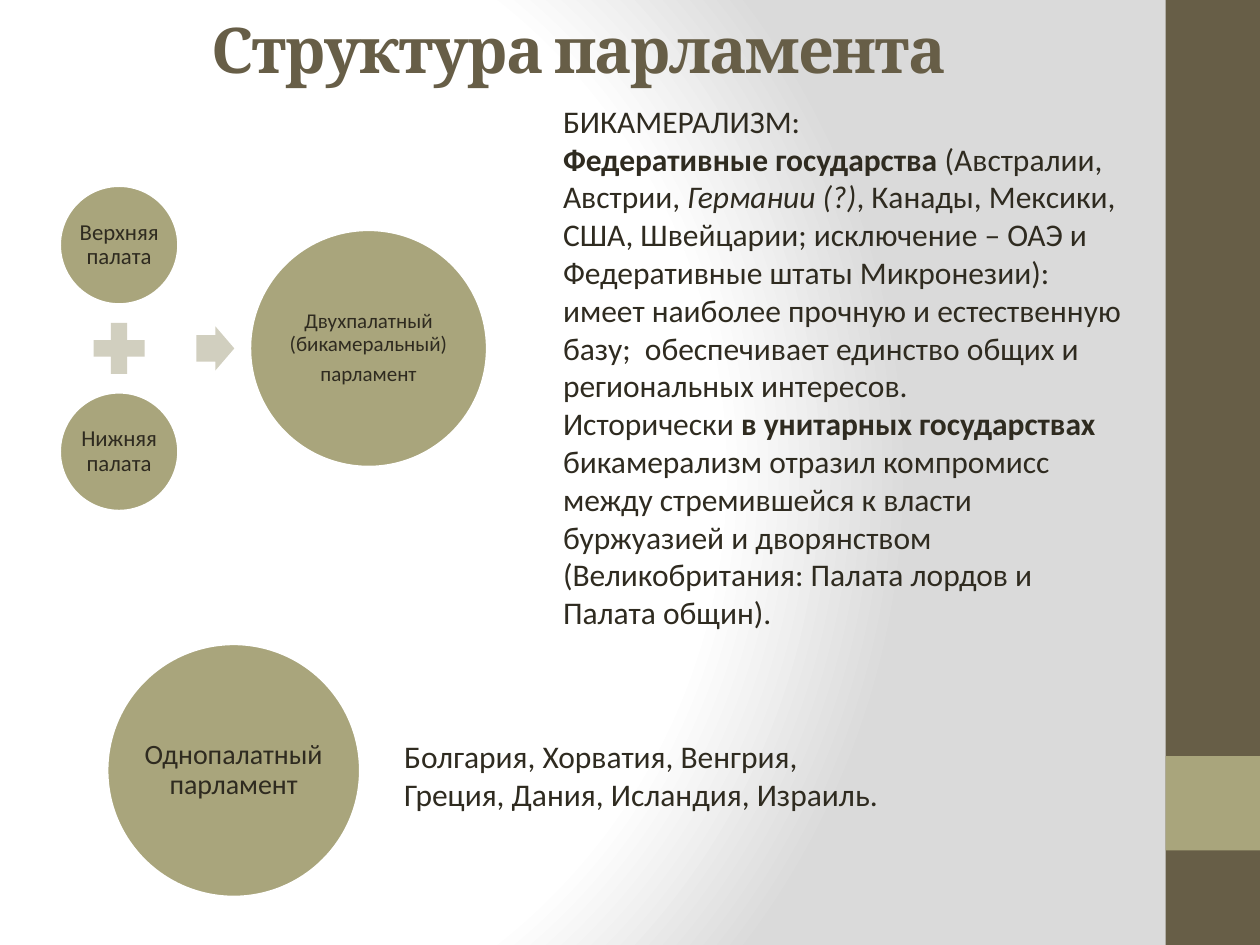
import pptx
import pptx.dml.color
import pptx.enum.shapes
import pptx.enum.text
import pptx.oxml
import pptx.util

Inches, Pt = pptx.util.Inches, pptx.util.Pt
SHAPE = pptx.enum.shapes.MSO_SHAPE
ALIGN = pptx.enum.text.PP_ALIGN
ANCHOR = pptx.enum.text.MSO_ANCHOR

BROWN, OLIVE, PALE, INK, WHITE = "675E47", "A9A57C", "D1CFBF", "2F2B20", "FFFFFF"

# Content: each paragraph is a list of (text, style) runs
TITLE = "Структура парламента"
BICAMERAL = [
    [("БИКАМЕРАЛИЗМ:", "")],
    [("Федеративные государства ", "bold"),
     ("(Австралии, Австрии, ", ""),
     ("Германии (?)", "italic"),
     (", Канады, Мексики, США, Швейцарии; исключение – ОАЭ и "
      "Федеративные штаты Микронезии):", "")],
    [("имеет наиболее прочную и естественную базу;  обеспечивает единство "
      "общих и региональных интересов.", "")],
    [("Исторически ", ""),
     ("в унитарных государствах ", "bold"),
     ("бикамерализм отразил компромисс между стремившейся к власти буржуазией "
      "и дворянством (Великобритания: Палата лордов и Палата общин).", "")],
]
UNICAMERAL = [[("Болгария, Хорватия, Венгрия, Греция, Дания, Исландия, Израиль.", "")]]
TEXTS = [(BICAMERAL, (4.37, 0.76, 4.69, 4.34)), (UNICAMERAL, (3.11, 5.8, 4.09, 0.71))]

# Circles: paragraphs, centre x, centre y, diameter, text size, outline width
CHAMBER_X, FLOW_Y, CHAMBER_STEP = 0.945, 2.765, 0.82
CIRCLES = [
    (["Верхняя палата"], CHAMBER_X, FLOW_Y - CHAMBER_STEP, 0.95, 13, 2),
    (["Нижняя палата"], CHAMBER_X, FLOW_Y + CHAMBER_STEP, 0.95, 13, 2),
    (["Двухпалатный (бикамеральный)", "парламент"], 2.925, FLOW_Y, 1.89, 12, 2),
    (["Однопалатный парламент"], 1.855, 6.115, 2.03, 16, 3),
]
# Signs: preset, centre x, width, height
SIGNS = [(SHAPE.MATH_PLUS, CHAMBER_X, 0.55, 0.55), (SHAPE.RIGHT_ARROW, 1.71, 0.3, 0.35)]
SIDE_BAND = [(BROWN, 0, 7.5), (OLIVE, 6, 0.75)]

BACKGROUND = (
    '<a:gradFill xmlns:a="http://schemas.openxmlformats.org/drawingml/2006/main" rotWithShape="1">'
    '<a:gsLst><a:gs pos="0"><a:srgbClr val="FFFFFF"/></a:gs>'
    '<a:gs pos="75000"><a:srgbClr val="FFFFFF"/></a:gs>'
    '<a:gs pos="100000"><a:srgbClr val="DADADA"/></a:gs></a:gsLst>'
    '<a:path path="circle"><a:fillToRect l="20000" t="50000" r="100000" b="50000"/></a:path>'
    '</a:gradFill>'
)


def color(hex_value):
    return pptx.dml.color.RGBColor.from_string(hex_value)


def add_run(paragraph, text, size, style="", font="Calibri", ink=INK):
    run = paragraph.add_run()
    run.text = text
    run.font.name, run.font.size = font, Pt(size)
    run.font.color.rgb = color(ink)
    run.font.bold, run.font.italic = style == "bold", style == "italic"
    return run


def paragraphs_for(frame, items):
    for index, item in enumerate(items):
        yield (frame.add_paragraph() if index else frame.paragraphs[0]), item


def add_figure(slide, preset, box, fill, outline=0):
    figure = slide.shapes.add_shape(preset, *map(Inches, box))
    figure.shadow.inherit = False
    figure.fill.solid()
    figure.fill.fore_color.rgb = color(fill)
    if outline:
        figure.line.color.rgb = color(WHITE)
        figure.line.width = Pt(outline)
    else:
        figure.line.fill.background()
    return figure


def centred(x, y, width, height):
    return x - width / 2, y - height / 2, width, height


def add_circle(slide, lines, x, y, diameter, size, outline):
    circle = add_figure(slide, SHAPE.OVAL, centred(x, y, diameter, diameter), OLIVE, outline)
    frame = circle.text_frame
    frame.word_wrap = True
    frame.vertical_anchor = ANCHOR.MIDDLE
    frame.margin_left = frame.margin_right = frame.margin_top = frame.margin_bottom = 0
    for paragraph, line in paragraphs_for(frame, lines):
        paragraph.alignment = ALIGN.CENTER
        paragraph.line_spacing = 0.9
        paragraph.space_after = Pt(size * 0.35)
        add_run(paragraph, line, size)


def add_text(slide, content, box):
    frame = slide.shapes.add_textbox(*map(Inches, box)).text_frame
    frame.word_wrap = True
    frame.auto_size = pptx.enum.text.MSO_AUTO_SIZE.SHAPE_TO_FIT_TEXT
    for paragraph, runs in paragraphs_for(frame, content):
        for text, style in runs:
            add_run(paragraph, text, 18, style)


def add_title(slide):
    title = slide.shapes.title
    title.left, title.top, title.width, title.height = map(Inches, (0.43, 0, 8.33, 0.76))
    frame = title.text_frame
    frame.word_wrap = True
    frame.auto_size = pptx.enum.text.MSO_AUTO_SIZE.NONE
    frame.vertical_anchor = ANCHOR.MIDDLE
    frame.paragraphs[0].alignment = ALIGN.CENTER
    run = add_run(frame.paragraphs[0], TITLE, 36, "bold", "Cambria", BROWN)
    run.font._element.set("spc", "-100")


def main():
    deck = pptx.Presentation()
    deck.slide_width, deck.slide_height = Inches(10), Inches(7.5)
    slide = deck.slides.add_slide(deck.slide_layouts[5])

    # Background gradient
    slide.background.fill.solid()
    properties = slide.element.cSld.bg.bgPr
    properties.replace(properties[0], pptx.oxml.parse_xml(BACKGROUND))

    # Side band and title
    for fill, top, height in SIDE_BAND:
        add_figure(slide, SHAPE.RECTANGLE, (9.25, top, 0.75, height), fill)
    add_title(slide)

    # Diagram
    for circle in CIRCLES:
        add_circle(slide, *circle)
    for preset, x, width, height in SIGNS:
        sign = add_figure(slide, preset, centred(x, FLOW_Y, width, height), PALE)
        if preset == SHAPE.RIGHT_ARROW:
            sign.adjustments[0] = 0.6

    # Explanations
    for content, box in TEXTS:
        add_text(slide, content, box)

    deck.save("out.pptx")


if __name__ == "__main__":
    main()
